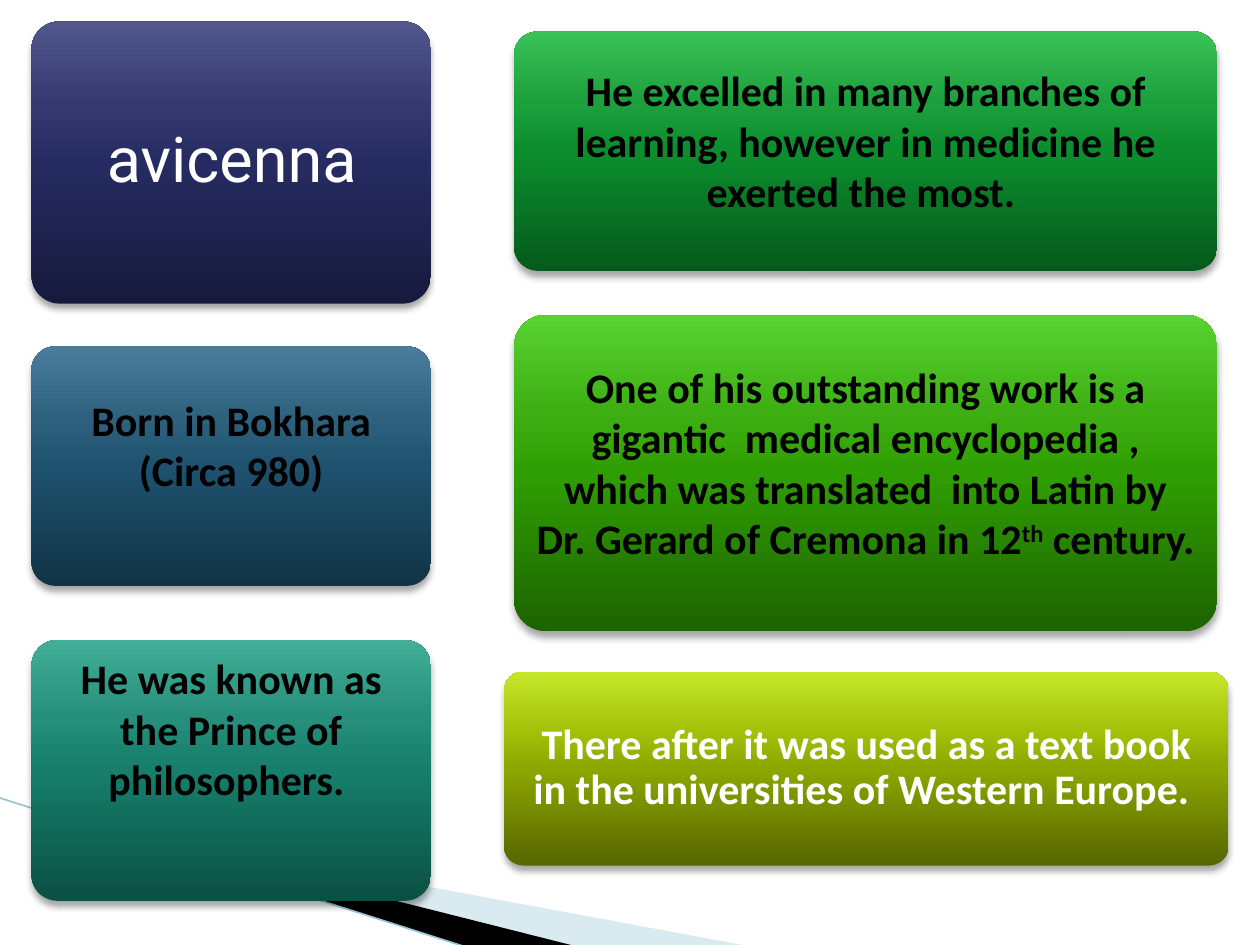
"""Builds a slide of six gradient cards on the life and work of Avicenna."""
from lxml.etree import SubElement
from pptx import Presentation
from pptx.dml.color import RGBColor
from pptx.enum.shapes import MSO_CONNECTOR, MSO_SHAPE
from pptx.enum.text import MSO_ANCHOR, MSO_AUTO_SIZE, PP_ALIGN
from pptx.oxml.ns import qn
from pptx.util import Inches, Pt

THEME = {
    "title": {"name": "Roboto", "size": Pt(36), "bold": False},
    "body": {"name": "Calibri", "size": Pt(24), "bold": True},
    "black": "000000",
    "white": "FFFFFF",
    "wedge": "A0CBDC",
    "line": "97C5D8",
    "stops": (0, 50, 70, 100),
    "navy": ("171A3D", "262B61", "353970", "51568D"),
    "blue": ("113346", "1E526F", "2D617E", "4A7C9C"),
    "teal": ("0B5043", "167E6B", "258F7B", "42AE98"),
    "green": ("055A1B", "0C8E2E", "1C9F3D", "3AC157"),
    "lime": ("1D6300", "2F9E02", "3EB013", "58D331"),
    "olive": ("576700", "8CA600", "A4C20A", "C5E729"),
}


def add_child(parent, tag, **values):
    return SubElement(parent, qn(tag), {key: str(value) for key, value in values.items()})


def write_text(shape, runs, style, color, spacing, inset, lift):
    frame = shape.text_frame
    frame_format = {
        "word_wrap": True,
        "auto_size": MSO_AUTO_SIZE.NONE,
        "vertical_anchor": MSO_ANCHOR.MIDDLE,
        "margin_left": Inches(inset),
        "margin_right": Inches(inset),
        "margin_top": 0,
        "margin_bottom": Inches(lift),
    }
    for name, value in frame_format.items():
        setattr(frame, name, value)
    para = frame.paragraphs[0]
    para.alignment = PP_ALIGN.CENTER
    para.line_spacing = spacing
    for text, baseline in runs:
        span = para.add_run()
        span.text = text
        for name, value in THEME[style].items():
            setattr(span.font, name, value)
        span.font.color.rgb = RGBColor.from_string(THEME[color])
        if baseline:
            span.font._element.set("baseline", str(baseline * 1000))


deck = Presentation()
deck.slide_width, deck.slide_height = Inches(10), Inches(7.5)
page = deck.slides.add_slide(deck.slide_layouts.get_by_name("Title Only"))

wedges = [
    ("wedge", 40, [(0.55, 6.51), (5.95, 7.51), (4.56, 7.51), (0.55, 6.5)]),
    ("black", 100, [(0.53, 6.49), (4.57, 7.51), (3.72, 7.52), (0.54, 6.5)]),
]
for color, opacity, points in wedges:
    corners = [(Inches(x), Inches(y)) for x, y in points]
    builder = page.shapes.build_freeform(*corners[0])
    builder.add_line_segments(corners[1:], close=True)
    wedge = builder.convert_to_shape()
    wedge.shadow.inherit = False
    wedge.line.fill.background()
    wedge.fill.solid()
    wedge.fill.fore_color.rgb = RGBColor.from_string(THEME[color])
    if opacity < 100:
        solid = wedge.element.spPr.find(qn("a:solidFill"))
        add_child(solid[0], "a:alpha", val=opacity * 1000)

edge = page.shapes.add_connector(
    MSO_CONNECTOR.STRAIGHT, Inches(-0.01), Inches(6.33), Inches(3.71), Inches(7.52)
)
edge.line.color.rgb = RGBColor.from_string(THEME["line"])
edge.line.width = Pt(0.95)
add_child(edge.element.spPr, "a:effectLst")

cards = [
    ("navy", (0.25, 0.17, 3.17, 2.24), [], "white", 0.9, 0),
    ("blue", (0.25, 2.75, 3.17, 1.9), [("Born in Bokhara (Circa 980)", 0)], "black", 1.0, 0.34),
    ("teal", (0.25, 5.08, 3.17, 2.07),
     [("He was known as the Prince of philosophers. ", 0)], "black", 1.0, 0.67),
    ("green", (4.08, 0.25, 5.58, 1.9),
     [("He excelled in many branches of learning, however in medicine he "
       "exerted the most. ", 0)], "black", 1.0, 0.17),
    ("lime", (4.08, 2.5, 5.58, 2.51),
     [("One of his outstanding work is a gigantic  medical encyclopedia , which was "
       "translated  into Latin by Dr. Gerard of Cremona in 12", 0),
      ("th", 30), (" century.", 0)], "black", 1.0, 0.17),
    ("olive", (4, 5.33, 5.75, 1.54),
     [("There after it was used as a text book in the universities of "
       "Western Europe. ", 0)], "white", 0.9, 0),
]
for gradient, place, runs, color, spacing, lift in cards:
    card = page.shapes.add_shape(MSO_SHAPE.ROUNDED_RECTANGLE, *map(Inches, place))
    card.adjustments[0] = 0.1
    card.line.fill.background()
    card.shadow.inherit = False
    properties = card.element.spPr
    fill = add_child(properties, "a:gradFill", rotWithShape=1)
    properties.find(qn("a:ln")).addprevious(fill)
    stops = add_child(fill, "a:gsLst")
    for position, shade in zip(THEME["stops"], THEME[gradient]):
        stop = add_child(stops, "a:gs", pos=position * 1000)
        add_child(stop, "a:srgbClr", val=shade)
    add_child(fill, "a:lin", ang=270 * 60000, scaled=0)
    shadow = add_child(
        properties.find(qn("a:effectLst")), "a:outerShdw",
        blurRad=Pt(4), dist=Pt(3), dir=90 * 60000, rotWithShape=0,
    )
    shadow_color = add_child(shadow, "a:srgbClr", val=THEME["black"])
    add_child(shadow_color, "a:alpha", val=35000)
    if runs:
        write_text(card, runs, "body", color, spacing, 0.1, lift)

title = page.shapes.title
title_place = {"left": 0.32, "top": 0.23, "width": 3.04, "height": 2.11}
for name, value in title_place.items():
    setattr(title, name, Inches(value))
write_text(title, [("avicenna", 0)], "title", "white", 0.9, 0.15, 0)
title.element.getparent().append(title.element)

deck.save("out.pptx")
